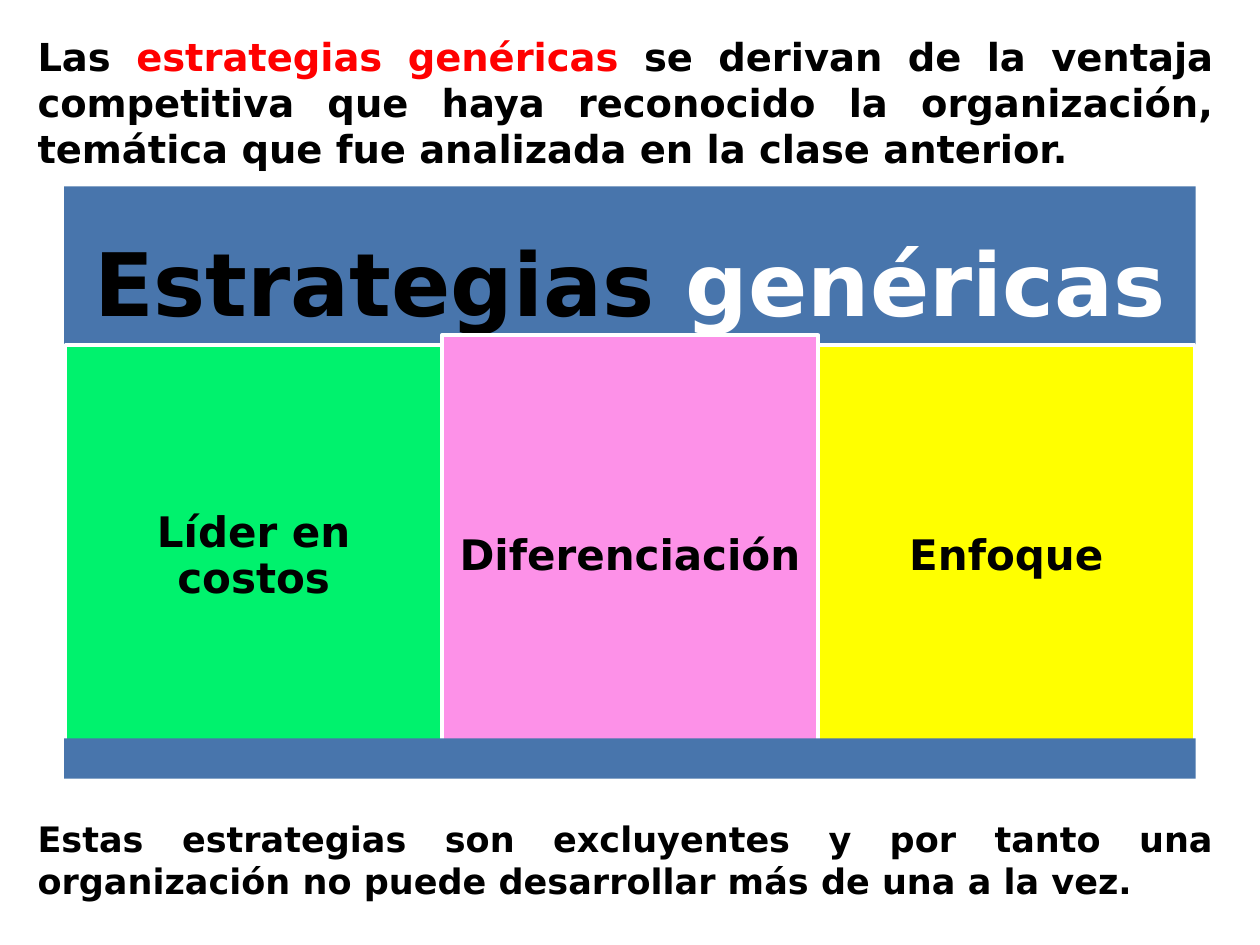
from pptx import Presentation
from pptx.dml.color import RGBColor
from pptx.enum.shapes import MSO_SHAPE
from pptx.enum.text import MSO_ANCHOR, MSO_AUTO_SIZE, PP_ALIGN
from pptx.util import Emu, Pt

EMU_PER_PX = 9144
FONT = "DejaVu Sans"
COLORS = {
    "black": "000000",
    "white": "FFFFFF",
    "red": "FF0000",
    "blue": "4875AC",
    "green": "00F26D",
    "pink": "FD91E8",
    "yellow": "FFFF00",
}
STRATEGIES = [
    ("Líder en costos", "green", 0),
    ("Diferenciación", "pink", 8),
    ("Enfoque", "yellow", 0),
]


def px(length):
    """Turn pixels into EMU."""
    return Emu(round(length * EMU_PER_PX))


def color(name):
    """Look up a named colour."""
    return RGBColor.from_string(COLORS[name])


def write_text(shape, runs, *, size, align, margins, anchor, line_spacing=None):
    """Fill a shape with one bold paragraph of (text, colour) runs."""
    frame = shape.text_frame
    frame.word_wrap = True
    frame.vertical_anchor = anchor
    frame.margin_left = frame.margin_right = px(margins[0])
    frame.margin_top = frame.margin_bottom = px(margins[1])
    paragraph = frame.paragraphs[0]
    paragraph.alignment = align
    paragraph.line_spacing = line_spacing
    for text, color_name in runs:
        run = paragraph.add_run()
        run.text = text
        run.font.name = FONT
        run.font.size = Pt(size)
        run.font.bold = True
        run.font.color.rgb = color(color_name)


def add_block(slide, left, top, width, height, fill, outline=None):
    """Add a flat rectangle."""
    shape = slide.shapes.add_shape(
        MSO_SHAPE.RECTANGLE, px(left), px(top), px(width), px(height)
    )
    shape.shadow.inherit = False
    shape.fill.solid()
    shape.fill.fore_color.rgb = color(fill)
    if outline:
        shape.line.color.rgb = color(outline)
        shape.line.width = Pt(2)
    else:
        shape.line.fill.background()
    return shape


def add_statement(slide, left, top, width, height, runs, size):
    """Add a justified text box."""
    box = slide.shapes.add_textbox(px(left), px(top), px(width), px(height))
    write_text(box, runs, size=size, align=PP_ALIGN.JUSTIFY, margins=(10, 5),
               anchor=MSO_ANCHOR.TOP)
    box.text_frame.auto_size = MSO_AUTO_SIZE.SHAPE_TO_FIT_TEXT


def add_strategy_table(slide, left, top, width, height):
    """Add the heading, the strategy columns and the base bar."""
    centered = {"align": PP_ALIGN.CENTER, "anchor": MSO_ANCHOR.MIDDLE,
                "line_spacing": 0.9}
    heading = add_block(slide, left, top, width, 162, "blue")
    write_text(heading, [("Estrategias ", "black"), ("genéricas ", "white")],
               size=50, margins=(21, 21), **centered)

    column_width = (width - 2) / len(STRATEGIES)
    for index, (label, fill, extra) in enumerate(STRATEGIES):
        column = add_block(
            slide, left + 1 + index * column_width, top + 126 - extra,
            column_width, 336 + 2 * extra, fill, outline="white",
        )
        write_text(column, [(label, "black")], size=24, margins=(10, 10), **centered)

    base_height = 32
    add_block(slide, left, top + height - base_height, width, base_height, "blue")


def main():
    """Build and save the presentation."""
    presentation = Presentation()
    presentation.slide_width = px(1000)
    presentation.slide_height = px(750)
    slide = presentation.slides.add_slide(presentation.slide_layouts[6])
    add_statement(slide, 20, 21, 953, 121, [
        ("Las ", "black"),
        ("estrategias genéricas", "red"),
        (" se derivan de la ventaja competitiva que haya reconocido la "
         "organización, temática que fue analizada en la clase anterior.", "black"),
    ], 22)
    add_strategy_table(slide, 51, 148, 898, 470)
    add_statement(slide, 20, 644, 953, 77, [
        ("Estas estrategias son excluyentes y por tanto una organización "
         "no puede desarrollar más de una a la vez.", "black"),
    ], 20)
    presentation.save("out.pptx")


if __name__ == "__main__":
    main()
